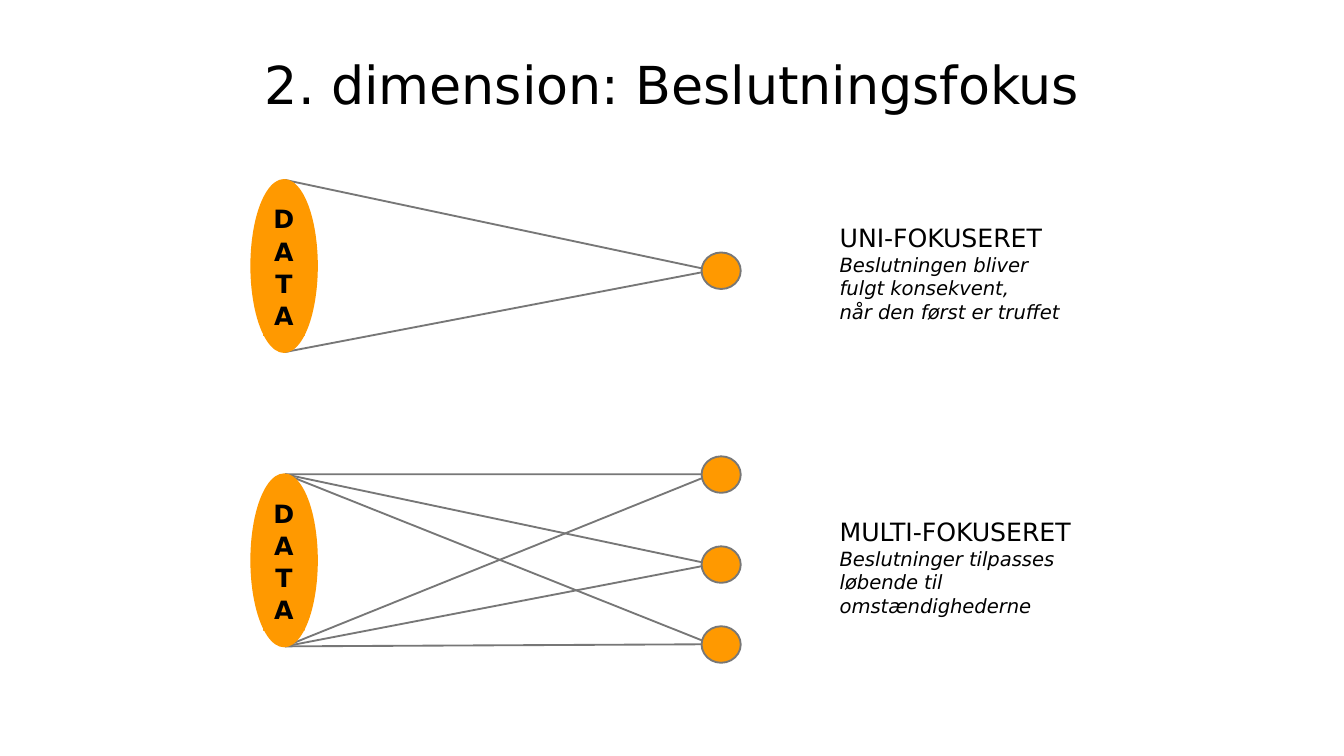
import dataclasses

import pptx
import pptx.dml.color
import pptx.enum.shapes
import pptx.enum.text
import pptx.util

Cm = pptx.util.Cm
Pt = pptx.util.Pt


@dataclasses.dataclass(frozen=True)
class Theme:
    """Colours, font and sizes of the deck."""
    font: str = "DejaVu Sans"
    ink: str = "000000"
    orange: str = "FF9900"
    grey: str = "777777"
    title: float = 28
    heading: float = 13.5
    body: float = 10.5
    line: float = 1
    letter_line: float = 0.75


@dataclasses.dataclass(frozen=True)
class Box:
    """A region of the page in centimetres."""
    left: float
    top: float
    width: float
    height: float

    def inner(self, left, top, width, height):
        """Return a box placed relative to this one."""
        return Box(self.left + left, self.top + top, width, height)

    def lengths(self):
        """Return left, top, width and height as slide lengths."""
        return [Cm(value) for value in dataclasses.astuple(self)]


THEME = Theme()


def rgb(code):
    """Turn a hex code into a colour."""
    return pptx.dml.color.RGBColor.from_string(code)


def style_paragraph(para, size, bold=False, italic=False):
    """Format every run of a paragraph."""
    for span in para.runs:
        span.font.name = THEME.font
        span.font.size = Pt(size)
        span.font.bold = bold
        span.font.italic = italic
        span.font.color.rgb = rgb(THEME.ink)


def set_insets(frame, side, end):
    """Set the side and end margins of a text frame."""
    frame.margin_left = frame.margin_right = Cm(side)
    frame.margin_top = frame.margin_bottom = Cm(end)


def style_line(shape, colour, width=THEME.line):
    """Give a shape a plain outline without shadow."""
    shape.shadow.inherit = False
    shape.line.color.rgb = rgb(colour)
    shape.line.width = Pt(width)


def draw_orange(page, kind, box, outline, width=THEME.line):
    """Draw an orange preset shape."""
    shape = page.shapes.add_shape(kind, *box.lengths())
    shape.fill.solid()
    shape.fill.fore_color.rgb = rgb(THEME.orange)
    style_line(shape, outline, width)
    return shape


def draw_title(page, box, text):
    """Write the centred slide title."""
    frame = page.shapes.add_textbox(*box.lengths()).text_frame
    frame.word_wrap = True
    set_insets(frame, 0, 0)
    frame.text = text
    frame.paragraphs[0].alignment = pptx.enum.text.PP_ALIGN.CENTER
    style_paragraph(frame.paragraphs[0], THEME.title)


def draw_beam(page, box, focus_top):
    """Draw lines from both ends of the data to one focus."""
    start, apex, end = [
        (Cm(box.left + x), Cm(box.top + y))
        for x, y in ((0.64, 0), (8.7, focus_top), (0.64, box.height))
    ]
    builder = page.shapes.build_freeform(*start)
    builder.add_line_segments([apex, end], close=False)
    beam = builder.convert_to_shape()
    beam.fill.background()
    style_line(beam, THEME.grey)


def draw_data(page, box, word):
    """Draw the data ellipse with its word set vertically."""
    kinds = pptx.enum.shapes.MSO_SHAPE
    draw_orange(page, kinds.OVAL, box, THEME.orange)
    for index, letter in enumerate(word):
        spot = box.inner(0.23, 0.35 + 0.61 * index, 0.77, 0.76)
        tile = draw_orange(page, kinds.RECTANGLE, spot, THEME.orange, THEME.letter_line)
        frame = tile.text_frame
        frame.word_wrap = False
        set_insets(frame, 0.2, 0.1)
        frame.text = letter
        frame.paragraphs[0].alignment = pptx.enum.text.PP_ALIGN.CENTER
        style_paragraph(frame.paragraphs[0], THEME.heading, bold=True)


def draw_caption(page, box, heading, lines):
    """Write a heading with italic lines below it."""
    frame = page.shapes.add_textbox(*box.lengths()).text_frame
    frame.word_wrap = True
    set_insets(frame, 0.2, 0.1)
    frame.text = "\n".join([heading, *lines])
    style_paragraph(frame.paragraphs[0], THEME.heading)
    for para in frame.paragraphs[1:]:
        style_paragraph(para, THEME.body, italic=True)


def draw_model(page, box, focus_tops, heading, lines):
    """Draw data, its focus points and the caption in one row."""
    for top in focus_tops:
        draw_beam(page, box, top)
    for top in focus_tops:
        spot = box.inner(8.51, top - 0.34, 0.74, 0.69)
        draw_orange(page, pptx.enum.shapes.MSO_SHAPE.OVAL, spot, THEME.grey)
    draw_data(page, box.inner(0, 0, 1.24, box.height), "DATA")
    draw_caption(page, box.inner(10.92, 0.7, 4.98, 2.11), heading, lines)


def main():
    """Build and save the deck."""
    deck = pptx.Presentation()
    deck.slide_width, deck.slide_height = Cm(25.4), Cm(14.28)
    page = deck.slides.add_slide(deck.slide_layouts[6])
    draw_title(page, Box(1.09, 0.99, 23.22, 1.88), "2. dimension: Beslutningsfokus")
    draw_model(
        page, Box(4.75, 3.4, 15.9, 3.25), [1.71], "UNI-FOKUSERET",
        ["Beslutningen bliver", "fulgt konsekvent,", "når den først er truffet"],
    )
    draw_model(
        page, Box(4.75, 8.96, 15.9, 3.25), [0, 1.7, 3.21], "MULTI-FOKUSERET",
        ["Beslutninger tilpasses", "løbende til", "omstændighederne"],
    )
    deck.save("out.pptx")


if __name__ == "__main__":
    main()
